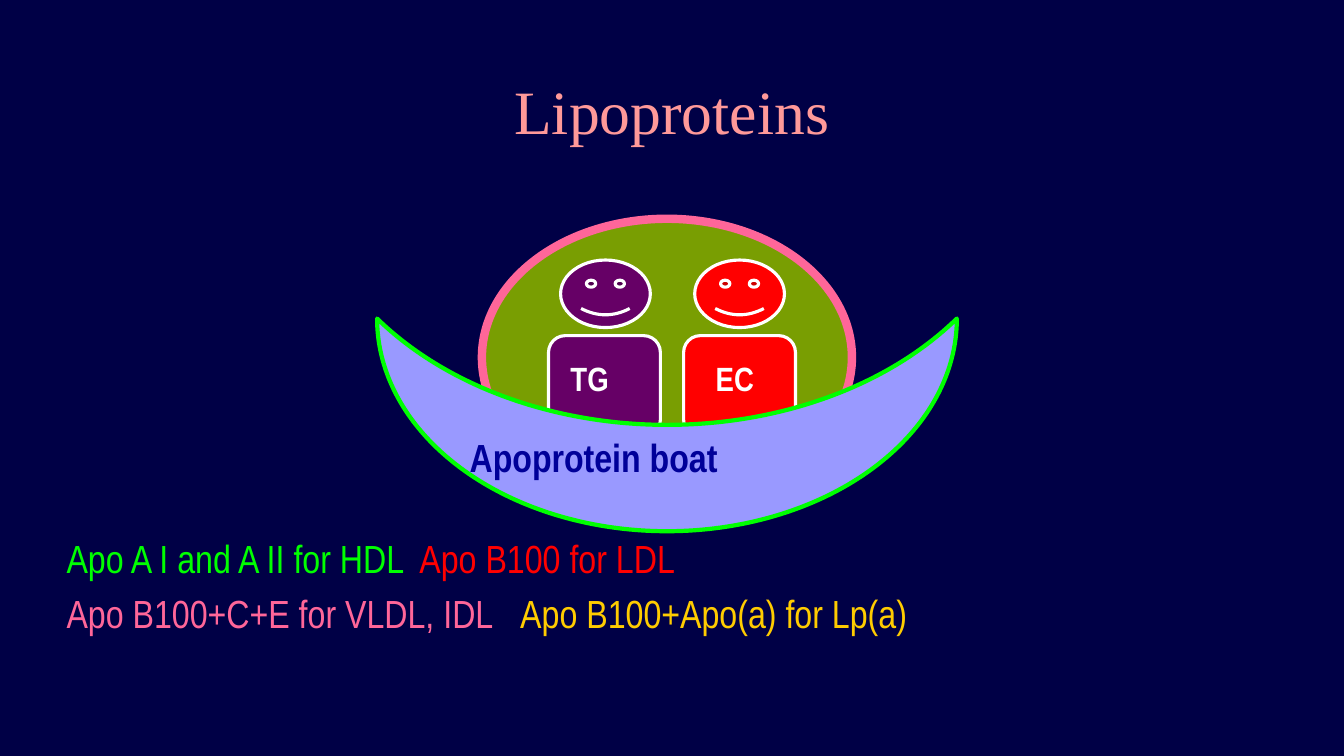
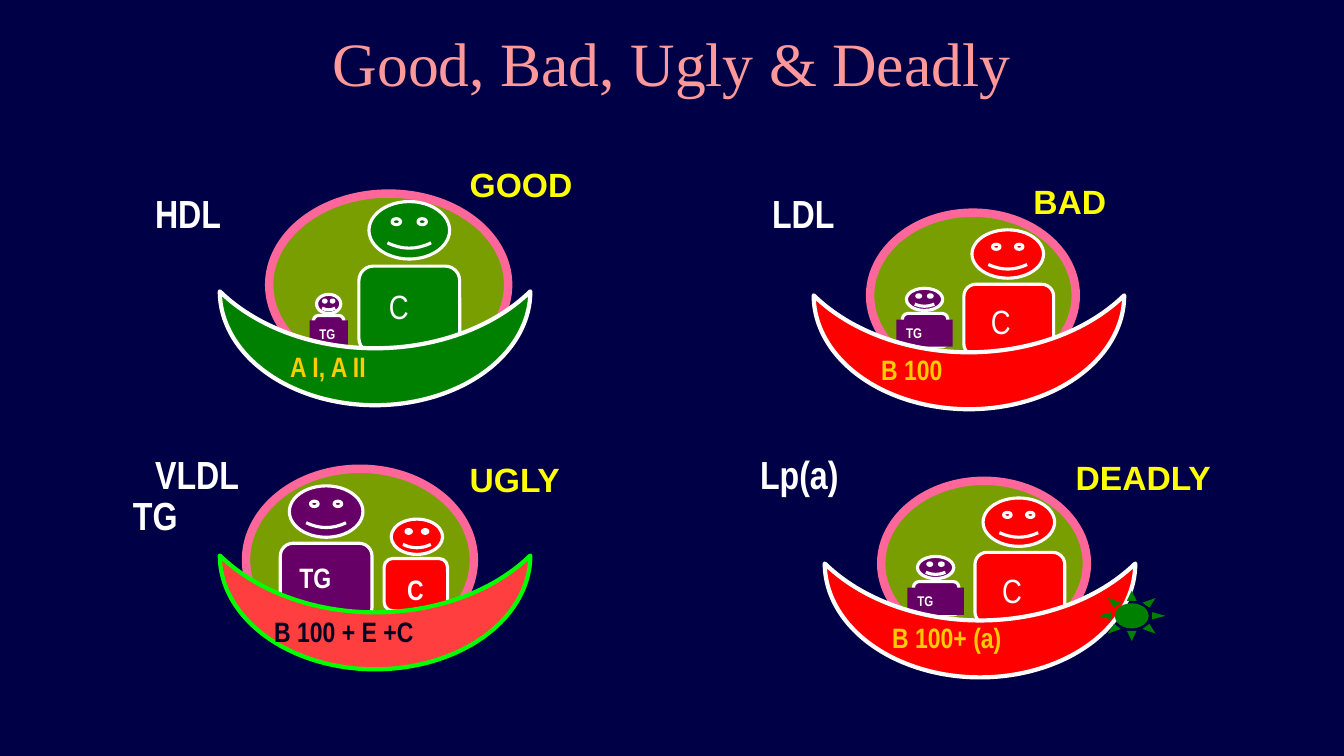
"""Build two slides that picture lipoproteins as passengers in apoprotein boats."""
from lxml import etree
from pptx import Presentation
from pptx.dml.color import RGBColor
from pptx.enum import shapes, text
from pptx.oxml import ns
from pptx.util import Inches, Pt

NAVY, ROSE, PINK, OLIVE = "000046", "FF9999", "FF6699", "799E02"
PURPLE, RED, GREEN, LIME = "660066", "FF0000", "008000", "00FF00"
WHITE, YELLOW, GOLD = "FFFFFF", "FFFF00", "FFCC00"
NARROW, SANS, SERIF = "Arial Narrow", "Arial", "Times New Roman"
PRESET = shapes.MSO_SHAPE


def rgb(value):
    return RGBColor.from_string(value)


def place(sp, box):
    sp.left, sp.top, sp.width, sp.height = (Inches(v) for v in box)


class Deck:
    def __init__(self):
        self.prs = Presentation()
        self.prs.slide_width, self.prs.slide_height = Inches(13.33), Inches(7.5)
        fill = self.prs.slide_master.background.fill
        fill.solid()
        fill.fore_color.rgb = rgb(NAVY)
        self.s = None

    def slide(self, layout, title, top):
        self.s = self.prs.slides.add_slide(self.prs.slide_layouts[layout])
        sp = self.s.shapes.title
        place(sp, (1, top, 11.33, 1.25))
        self.set_text(sp, title, 44, ROSE, SERIF, False, text.PP_ALIGN.CENTER)

    def style(self, r, size, colour, font, bold):
        r.font.size, r.font.name, r.font.bold = Pt(size), font, bold
        r.font.color.rgb = rgb(colour)

    def set_text(self, sp, words, size, colour, font=NARROW, bold=True,
                 align=text.PP_ALIGN.LEFT):
        tf = sp.text_frame
        tf.text = words
        tf.word_wrap = True
        tf.auto_size = text.MSO_AUTO_SIZE.NONE
        tf.vertical_anchor = text.MSO_ANCHOR.TOP
        p = tf.paragraphs[0]
        p.alignment = align
        self.style(p.runs[0], size, colour, font, bold)

    def label(self, x, y, w, h, words, size, colour, font=NARROW):
        sp = self.s.shapes.add_textbox(*(Inches(v) for v in (x, y, w, h)))
        self.set_text(sp, words, size, colour, font)

    def shape(self, kind, box, fill, line=None, weight=2.25, adj=None):
        sp = self.s.shapes.add_shape(kind, *(Inches(v) for v in box))
        sp.shadow.inherit = False
        sp.fill.solid()
        sp.fill.fore_color.rgb = rgb(fill)
        if line:
            sp.line.color.rgb = rgb(line)
            sp.line.width = Pt(weight)
        else:
            sp.line.fill.background()
        if adj is not None:
            sp.adjustments[0] = adj
        return sp

    def boat(self, x, y, crew, hull, edge, name, size=20, ink=GOLD, w=3.08, h=1.13):
        """Draw a boat whose hull box starts at x, y; crew boxes are relative to it."""
        def at(box):
            return x + box[0], y + box[1], box[2], box[3]

        self.shape(PRESET.OVAL, at(crew["bubble"]), OLIVE, PINK, 6)
        for face, body, badge, colour, words, points, bold in crew["people"]:
            self.shape(PRESET.SMILEY_FACE, at(face), colour, WHITE)
            self.shape(PRESET.ROUNDED_RECTANGLE, at(body), colour, WHITE)
            sp = self.shape(PRESET.RECTANGLE, at(badge), colour)
            self.set_text(sp, words, points, WHITE, bold=bold)
        upright = (x + (w - h) / 2, y + (h - w) / 2, h, w)
        self.shape(PRESET.MOON, upright, hull, edge, 3, 0.5).rotation = 270
        dx, dy = crew["name"]
        self.label(x + dx, y + dy, 3.78, size / 60 + 0.1, name, size, ink)

    def pairs(self, box, rows):
        """Fill the body placeholder with rows of two texts split by a tab stop."""
        sp = self.s.placeholders[1]
        place(sp, box)
        tf = sp.text_frame
        tf.text = "\n".join(left + "\t" + right for left, _, right, _, _ in rows)
        tf.auto_size = text.MSO_AUTO_SIZE.NONE
        for p, (left, ink, right, ink2, stop) in zip(tf.paragraphs, rows):
            p.text = left + "\t"
            p.add_run().text = right
            for r, colour in zip(p.runs, (ink, ink2)):
                self.style(r, 28, colour, NARROW, False)
            p.space_before = Pt(5.6)
            pPr = p._p.get_or_add_pPr()
            pPr.set("marL", "0")
            pPr.set("indent", "0")
            etree.SubElement(pPr, ns.qn("a:buNone"))
            tabs = etree.SubElement(pPr, ns.qn("a:tabLst"))
            etree.SubElement(tabs, ns.qn("a:tab"), pos=str(Inches(stop)), algn="l")


EQUAL = {
    "bubble": (1.04, -0.99, 3.67, 2.75), "name": (0.82, 1.09),
    "people": [
        ((3.15, -0.58, 0.89, 0.67), (3.04, 0.17, 1.11, 1), (3.26, 0.34, 0.78, 0.5),
         RED, "EC", 24, True),
        ((1.82, -0.58, 0.89, 0.67), (1.7, 0.17, 1.11, 1), (1.82, 0.34, 0.89, 0.5),
         PURPLE, "TG", 24, True)]}
HDL = {
    "bubble": (0.49, -0.97, 2.37, 1.81), "name": (0.6, 0.53),
    "people": [
        ((1.48, -0.89, 0.8, 0.57), (1.38, -0.25, 1, 0.86), (1.58, -0.1, 0.7, 0.5),
         GREEN, "C", 24, False),
        ((0.96, 0.03, 0.24, 0.19), (0.93, 0.24, 0.3, 0.29), (0.89, 0.29, 0.38, 0.27),
         PURPLE, "TG", 10, True)]}
LDL = {
    "bubble": (0.56, -0.82, 2.04, 1.64), "name": (0.57, 0.52),
    "people": [
        ((1.57, -0.65, 0.71, 0.48), (1.49, -0.11, 0.89, 0.71), (1.66, 0.01, 0.62, 0.5),
         RED, "C", 24, False),
        ((0.92, -0.07, 0.36, 0.22), (0.88, 0.18, 0.45, 0.33), (0.82, 0.24, 0.56, 0.27),
         PURPLE, "TG", 10, True)]}
VLDL = {
    "bubble": (0.26, -0.86, 2.26, 1.81), "name": (0.44, 0.54),
    "people": [
        ((1.7, -0.36, 0.51, 0.35), (1.63, 0.03, 0.63, 0.52), (1.76, 0.12, 0.44, 0.44),
         RED, "C", 20, True),
        ((0.69, -0.69, 0.73, 0.51), (0.6, -0.12, 0.91, 0.76), (0.69, 0, 0.73, 0.43),
         PURPLE, "TG", 20, True)]}


def main():
    deck = Deck()
    deck.slide(1, "Lipoproteins", 0.67)
    deck.boat(3.74, 3.16, EQUAL, "9999FF", LIME, "Apoprotein boat", 28, "000099",
              5.75, 2.11)
    deck.pairs((0.56, 5.25, 12.11, 1.14), [
        ("Apo A I and A II for HDL", LIME, "Apo B100 for LDL", RED, 8.01),
        ("Apo B100+C+E for VLDL, IDL", PINK, "Apo B100+Apo(a) for Lp(a)", GOLD, 7.56)])

    deck.slide(5, "Good, Bad, Ugly & Deadly", 0.2)
    deck.boat(2.18, 5.51, VLDL, "FF3F3F", LIME, "B 100 + E +C", ink="000022")
    deck.boat(8.07, 2.93, LDL, RED, WHITE, "B 100")
    deck.boat(2.18, 2.89, HDL, GREEN, WHITE, "A I, A II")
    deck.boat(8.18, 5.59, LDL, RED, WHITE, "B 100+ (a)")
    deck.shape(PRESET.SUN, (10.89, 5.86, 0.67, 0.5), GREEN, adj=0.25)
    for x, y, words in ((1.44, 1.83, "HDL"), (7.56, 1.83, "LDL"), (1.44, 4.42, "VLDL"),
                        (7.44, 4.42, "Lp(a)"), (1.22, 4.83, "TG")):
        deck.label(x, y, 1.44, 0.57, words, 28, WHITE)
    for x, y, words in ((4.56, 1.58, "GOOD"), (10.15, 1.75, "BAD"),
                        (4.56, 4.5, "UGLY"), (10.57, 4.48, "DEADLY")):
        deck.label(x, y, 2.44, 0.5, words, 24, YELLOW, SANS)
    deck.prs.save("out.pptx")


if __name__ == "__main__":
    main()
